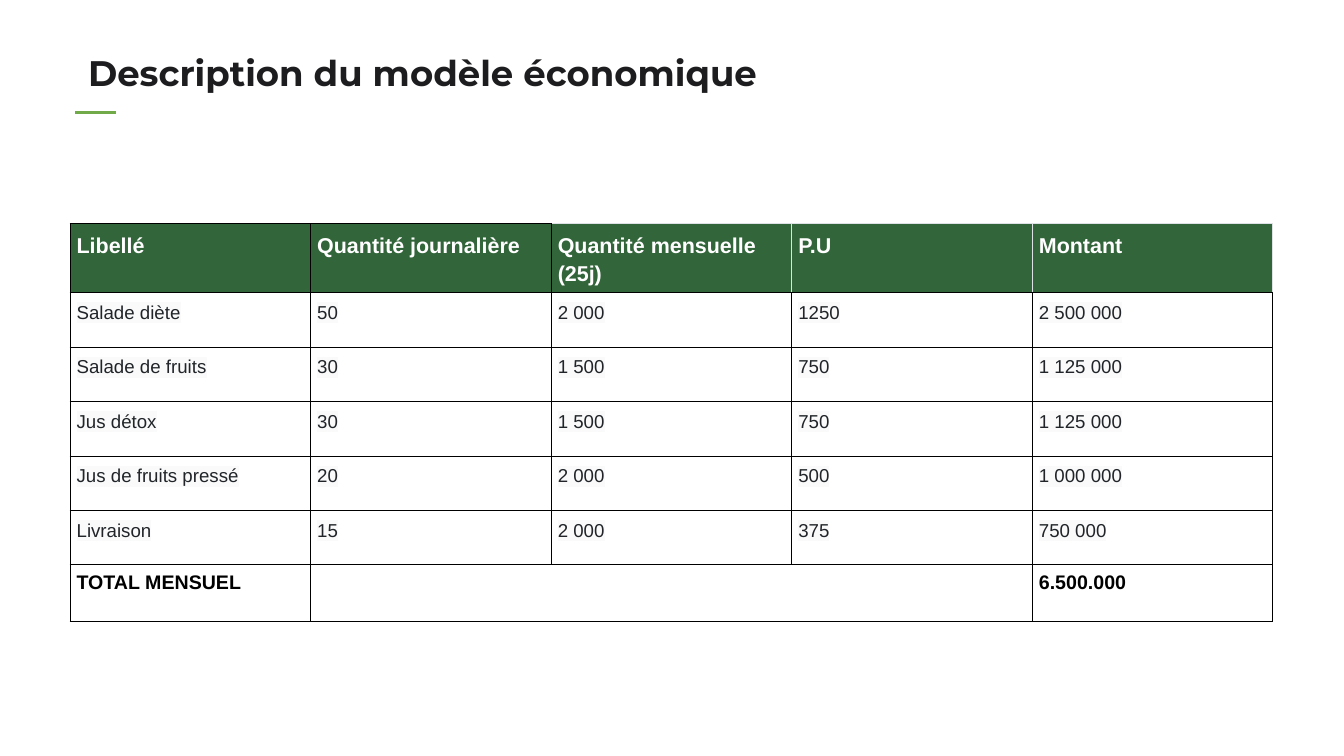
from dataclasses import dataclass
from typing import Any, Optional

from lxml import etree
from pptx import Presentation
from pptx import util as u
from pptx.dml.color import RGBColor
from pptx.enum import shapes, text
from pptx.oxml.ns import qn

WIDTH, HEIGHT = u.Inches(20), u.Inches(11.25)
COLORS = {
    "header": "32653A", "white": "FFFFFF", "body": "212529", "tint": "FAFAFA",
    "black": "000000", "grid": "DEE2E6", "accent": "71AA48", "title": "1D1D1F",
}
HEADINGS = ("Libellé", "Quantité journalière", "Quantité mensuelle (25j)", "P.U", "Montant")
PRODUCTS = (
    ("Salade diète", "50", "2 000", "1250", "2 500 000"),
    ("Salade de fruits", "30", "1 500", "750", "1 125 000"),
    ("Jus détox", "30", "1 500", "750", "1 125 000"),
    ("Jus de fruits pressé", "20", "2 000", "500", "1 000 000"),
    ("Livraison", "15", "2 000", "375", "750 000"),
)
TOTAL = ("TOTAL MENSUEL", "", "", "", "6.500.000")
INSET = u.Inches(0.1)
MARGINS = {f"margin_{side}": INSET for side in ("left", "top", "right", "bottom")}


@dataclass(frozen=True)
class TextStyle:
    size: float
    color: str
    bold: bool
    spacing: float = 1.0
    font: str = "Arial"
    highlight: Optional[str] = None


@dataclass(frozen=True)
class Band:
    labels: tuple[str, ...]
    height: float
    style: TextStyle
    fill: Optional[str] = None


TITLE = TextStyle(38, "title", True, 1.1, "Montserrat")
HEADER = TextStyle(23, "white", True, 1.15, highlight="header")
BODY = TextStyle(20, "body", False, 1.15, highlight="tint")
SUM = TextStyle(21, "black", True)
BANDS = (
    Band(HEADINGS, 0.87, HEADER, "header"),
    *(Band(product, 0.81, BODY) for product in PRODUCTS),
    Band(TOTAL, 0.84, SUM),
)


def rgb(name: str) -> RGBColor:
    return RGBColor.from_string(COLORS[name])


def apply(target: Any, values: dict[str, Any]) -> None:
    for key, value in values.items():
        setattr(target, key, value)


def write(frame: Any, label: str, style: TextStyle) -> None:
    paragraph = frame.paragraphs[0]
    apply(paragraph, {"line_spacing": style.spacing, "alignment": text.PP_ALIGN.LEFT})
    run = paragraph.add_run()
    run.text = label
    apply(run.font, {"name": style.font, "size": u.Pt(style.size), "bold": style.bold})
    run.font.color.rgb = rgb(style.color)
    if style.highlight:
        mark = etree.Element(qn("a:highlight"))
        etree.SubElement(mark, qn("a:srgbClr"), val=COLORS[style.highlight])
        run.font._element.find(qn("a:solidFill")).addnext(mark)


def border_colors(row: int, column: int) -> dict[str, str]:
    edges = dict.fromkeys("LRTB", "black")
    if row == 0 and column >= 2:
        edges.update(R="grid", T="grid")
        if column > 2:
            edges["L"] = "grid"
    return edges


def draw_borders(cell: Any, edges: dict[str, str]) -> None:
    properties = cell._tc.get_or_add_tcPr()
    for index, (side, color) in enumerate(edges.items()):
        edge = etree.Element(qn(f"a:ln{side}"), w=str(u.Pt(0.75)))
        fill = etree.SubElement(edge, qn("a:solidFill"))
        etree.SubElement(fill, qn("a:srgbClr"), val=COLORS[color])
        properties.insert(index, edge)


def draw_title(slide: Any) -> None:
    title = slide.shapes.title
    left, top = int(WIDTH * 0.0605), int(HEIGHT * 0.0525)
    apply(title, {"left": left, "top": top, "width": WIDTH - left, "height": u.Inches(0.84)})
    apply(title.text_frame, {
        **MARGINS, "word_wrap": True, "auto_size": text.MSO_AUTO_SIZE.NONE,
        "vertical_anchor": text.MSO_ANCHOR.TOP,
    })
    write(title.text_frame, "Description du modèle économique", TITLE)


def draw_accent(slide: Any) -> None:
    start, end, level = int(WIDTH * 0.056), int(WIDTH * 0.0865), int(HEIGHT * 0.1485)
    accent = slide.shapes.add_connector(
        shapes.MSO_CONNECTOR.STRAIGHT, start, level, end, level)
    accent.line.color.rgb = rgb("accent")
    accent.line.width = u.Pt(3.75)
    etree.SubElement(accent._element.spPr, qn("a:effectLst"))


def draw_table(slide: Any) -> None:
    count = len(HEADINGS)
    left, column_width = int(WIDTH * 0.052), int(WIDTH * 0.179)
    height = u.Inches(sum(band.height for band in BANDS))
    budget = slide.shapes.add_table(
        len(BANDS), count, left, int(HEIGHT * 0.296), column_width * count, height).table
    apply(budget, {"first_row": False, "horz_banding": False})
    for column in budget.columns:
        column.width = column_width
    for row, band in enumerate(BANDS):
        budget.rows[row].height = u.Inches(band.height)
        for column, label in enumerate(band.labels):
            cell = budget.cell(row, column)
            apply(cell, MARGINS)
            if band.fill:
                cell.fill.solid()
                cell.fill.fore_color.rgb = rgb(band.fill)
            else:
                cell.fill.background()
            draw_borders(cell, border_colors(row, column))
            if label:
                write(cell.text_frame, label, band.style)
    last = len(BANDS) - 1
    budget.cell(last, 1).merge(budget.cell(last, count - 2))


def main() -> None:
    deck = Presentation()
    apply(deck, {"slide_width": WIDTH, "slide_height": HEIGHT})
    slide = deck.slides.add_slide(deck.slide_layouts.get_by_name("Title Only"))
    draw_table(slide)
    draw_accent(slide)
    draw_title(slide)
    deck.save("out.pptx")


if __name__ == "__main__":
    main()
